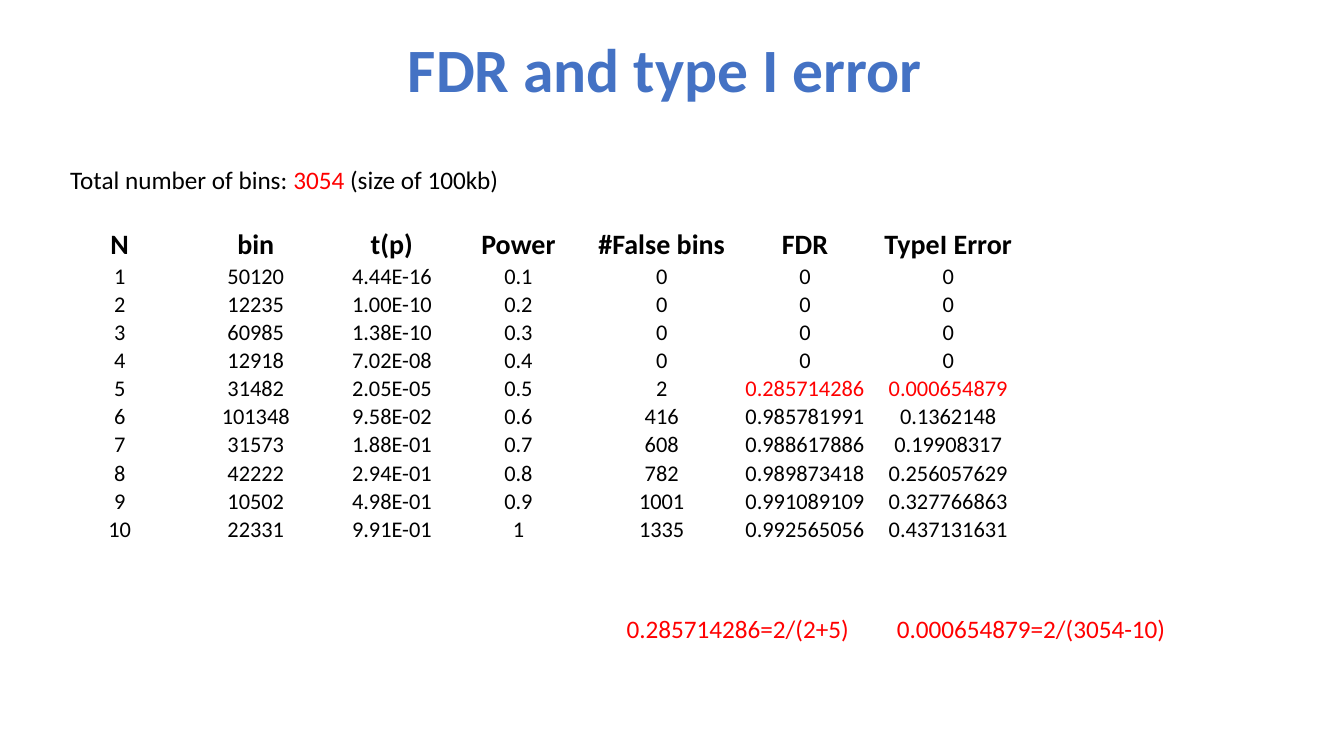
from pptx import Presentation
from pptx.dml.color import RGBColor
from pptx.enum.text import MSO_ANCHOR, PP_ALIGN
from pptx.util import Cm, Pt

BLUE = RGBColor(0x44, 0x72, 0xC4)
RED = RGBColor(0xFF, 0x00, 0x00)
BLACK = RGBColor(0x00, 0x00, 0x00)
LEFT, CENTER = PP_ALIGN.LEFT, PP_ALIGN.CENTER
TOP, MIDDLE, BOTTOM = MSO_ANCHOR.TOP, MSO_ANCHOR.MIDDLE, MSO_ANCHOR.BOTTOM

COL_W, ROW_H, TABLE_H = 3.43, 0.53, 8
TABLE_TOP, TABLE_LEFT = 5.72, 1.3
SINGLE_LEFT, PITCH = 11.35, 3.61

BINS = [
    ("N", "bin", "t(p)"),
    ("1", "50120", "4.44E-16"),
    ("2", "12235", "1.00E-10"),
    ("3", "60985", "1.38E-10"),
    ("4", "12918", "7.02E-08"),
    ("5", "31482", "2.05E-05"),
    ("6", "101348", "9.58E-02"),
    ("7", "31573", "1.88E-01"),
    ("8", "42222", "2.94E-01"),
    ("9", "10502", "4.98E-01"),
    ("10", "22331", "9.91E-01"),
]
SINGLES = [
    ("Power", "0.1", "0.2", "0.3", "0.4", "0.5",
     "0.6", "0.7", "0.8", "0.9", "1"),
    ("#False bins", "0", "0", "0", "0", "2",
     "416", "608", "782", "1001", "1335"),
    ("FDR", "0", "0", "0", "0", "0.285714286",
     "0.985781991", "0.988617886", "0.989873418", "0.991089109", "0.992565056"),
    ("TypeI Error", "0", "0", "0", "0", "0.000654879",
     "0.1362148", "0.19908317", "0.256057629", "0.327766863", "0.437131631"),
]
MARKED = {"0.285714286", "0.000654879"}


def write(frame, text, size=18, color=BLACK, bold=False, align=LEFT, spacing=None):
    """Append a formatted run to the first paragraph of a text frame."""
    para = frame.paragraphs[0]
    para.alignment = align
    para.line_spacing = spacing
    run = para.add_run()
    run.text = text
    font = run.font
    font.name, font.size, font.bold = "Calibri", Pt(size), bold
    font.color.rgb = color


def add_frame(slide, left, top, width, height, anchor=TOP):
    """Add a wrapping text box and return its text frame."""
    box = slide.shapes.add_textbox(Cm(left), Cm(top), Cm(width), Cm(height))
    frame = box.text_frame
    frame.word_wrap = True
    frame.vertical_anchor = anchor
    return frame


def add_title(slide, left, top, width, height):
    """Place the slide title in the given box."""
    frame = add_frame(slide, left, top, width, height, MIDDLE)
    write(frame, "FDR and type I error", size=44, color=BLUE, bold=True,
          align=CENTER, spacing=0.9)


def add_total(slide, left, top, width, height):
    """Place the line with the number of bins."""
    frame = add_frame(slide, left, top, width, height)
    write(frame, "Total number of bins: ")
    write(frame, "3054", color=RED)
    write(frame, " (size of 100kb)")


def add_note(slide, text, left, top, width, height):
    """Place a red formula below the tables."""
    write(add_frame(slide, left, top, width, height), text, color=RED)


def fill_cell(cell, text, head):
    """Format one table cell and write its text."""
    cell.fill.background()
    cell.vertical_anchor = BOTTOM
    cell.margin_left = cell.margin_right = cell.margin_top = Cm(0.03)
    cell.margin_bottom = 0
    write(cell.text_frame, text, size=20 if head else 16, bold=head,
          color=RED if text in MARKED else BLACK, align=CENTER)


def add_grid(slide, rows, left, top):
    """Add a plain table with equal columns at the given corner."""
    count = len(rows[0])
    shape = slide.shapes.add_table(len(rows), count, Cm(left), Cm(top),
                                   Cm(COL_W * count), Cm(TABLE_H))
    table = shape.table
    table.first_row = table.horz_banding = False
    for i, row in enumerate(rows):
        table.rows[i].height = Cm(ROW_H)
        for j, text in enumerate(row):
            fill_cell(table.cell(i, j), text, head=i == 0)
    shape.height = Cm(TABLE_H)


def add_tables(slide, left, top):
    """Place the bin table and the row of one-column tables."""
    add_grid(slide, BINS, left, top)
    for i, values in enumerate(SINGLES):
        rows = [(value,) for value in values]
        add_grid(slide, rows, left + SINGLE_LEFT - TABLE_LEFT + i * PITCH, top)


def main():
    """Build and save the slide."""
    deck = Presentation()
    deck.slide_width, deck.slide_height = Cm(33.87), Cm(19.05)
    slide = deck.slides.add_slide(deck.slide_layouts[6])
    add_title(slide, 2.16, 0, 29.21, 3.68)
    add_total(slide, 1.52, 4.01, 23.34, 1.02)
    add_tables(slide, TABLE_LEFT, TABLE_TOP)
    add_note(slide, "0.285714286=2/(2+5)", 15.54, 15.34, 6.76, 1.02)
    add_note(slide, "0.000654879=2/(3054-10)", 22.35, 15.34, 7.98, 1.02)
    deck.save("out.pptx")


if __name__ == "__main__":
    main()
